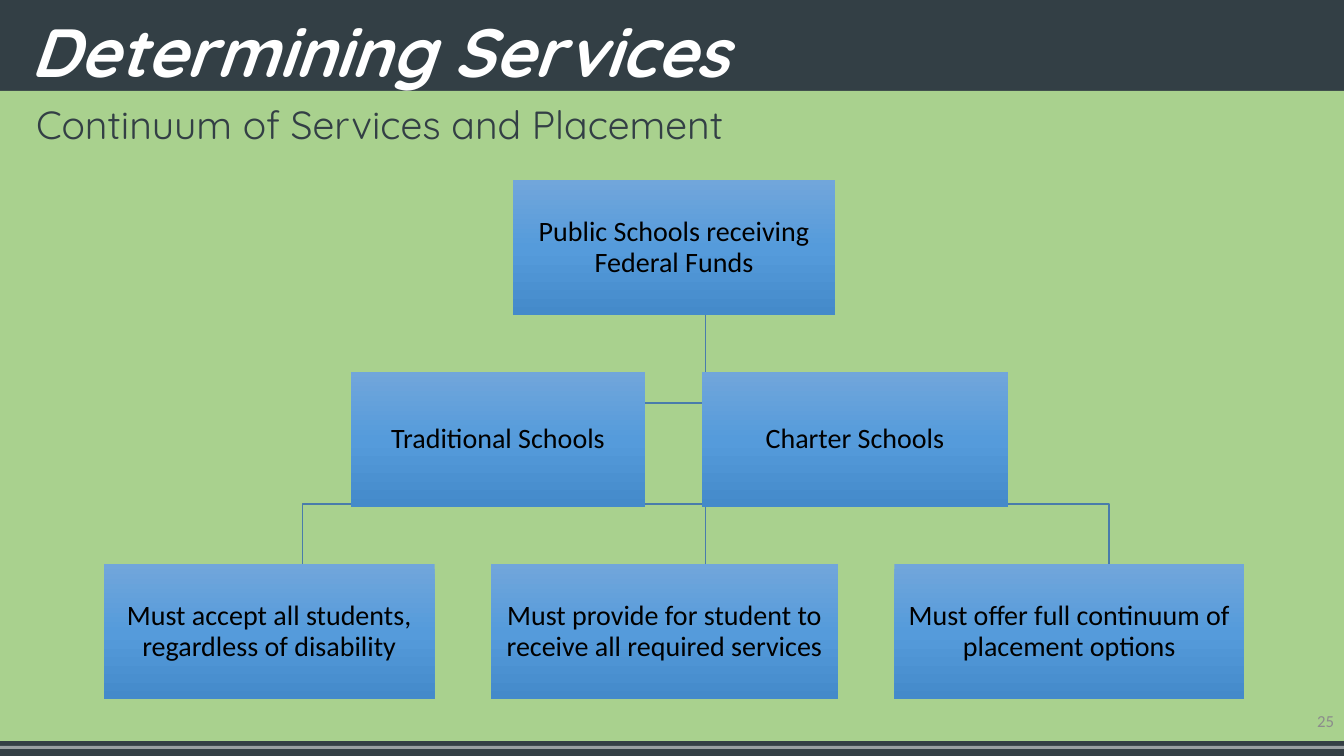
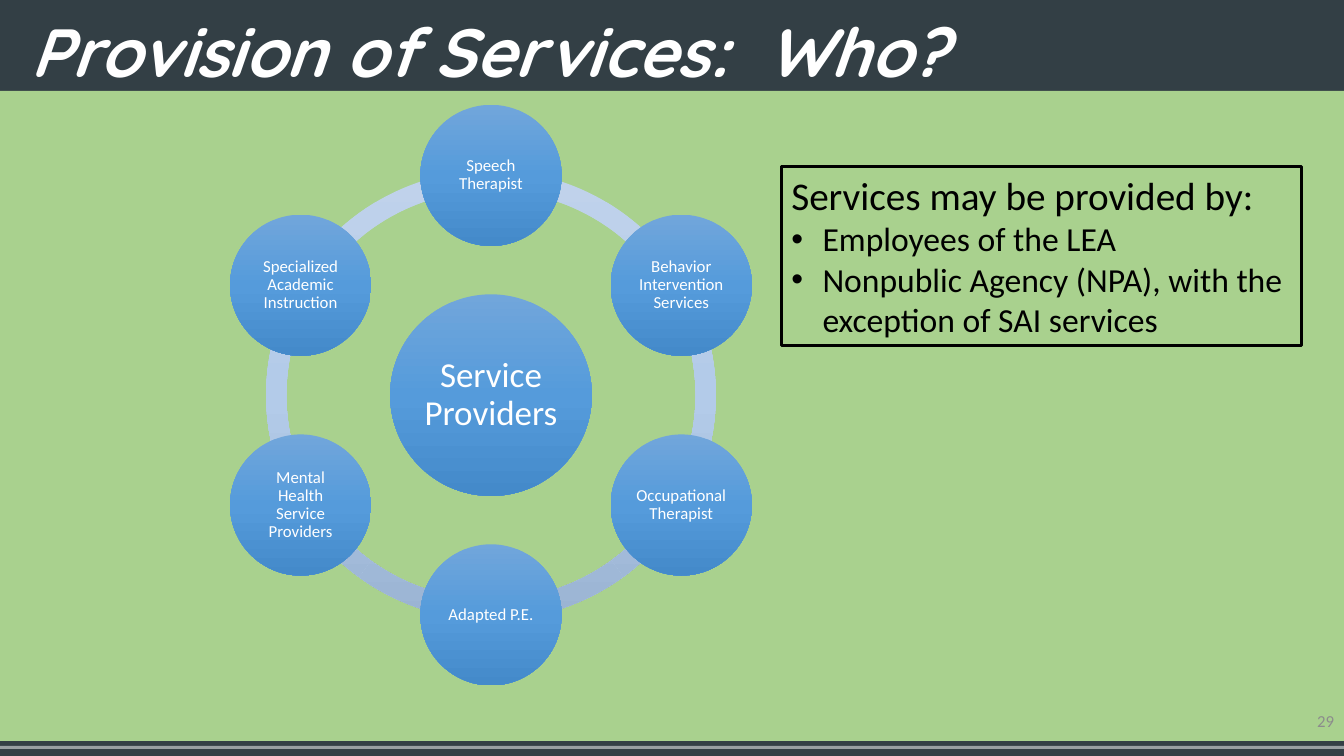
from math import cos, radians, sin

from lxml.etree import SubElement
from pptx import Presentation
from pptx.dml.color import RGBColor
from pptx.enum.shapes import MSO_SHAPE as Form
from pptx.enum.text import MSO_ANCHOR as Anchor, MSO_AUTO_SIZE as Fit, PP_ALIGN as Align
from pptx.oxml.ns import qn
from pptx.util import Inches, Pt

WIDTH, HEIGHT = 13.33, 7.5
COLORS = {"slate": "333F45", "base": "343F45", "green": "A9D18E", "white": "FFFFFF",
          "black": "000000", "gray": "8C8C8C", "link": "497CAB"}
BLUE = ("71A6DB", "559BDB", "448ACA")
PALE = ("C0D2EB", "B3CBE9", "9BB4D3")

STYLES = {
    "title": dict(name="Quicksand", size=48.6, bold=True, italic=True, color="white"),
    "subtitle": dict(name="Quicksand", size=28, color="slate"),
    "number": dict(name="Calibri", size=12, color="gray"),
    "school": dict(name="Calibri", size=20, color="black"),
    "hub": dict(name="Calibri", size=25, color="white"),
    "provider": dict(name="Calibri", size=12, color="white"),
    "lead": dict(name="Calibri", size=28, color="black"),
    "item": dict(name="Calibri", size=24, color="black"),
}

SUBTITLE = "Continuum of Services and Placement"
BOX_HEIGHT, GAP = 1.34, 0.56
TREE = [
    (5.09, 1.79, [("Public Schools receiving Federal Funds", 3.19)]),
    (3.48, 3.69, [("Traditional Schools", 2.92), ("Charter Schools", 3.04)]),
    (1.03, 5.6, [("Must accept all students, regardless of disability", 3.28),
                 ("Must provide for student to receive all required services", 3.44),
                 ("Must offer full continuum of placement options", 3.47)]),
]

HUB = "Service Providers"
PROVIDERS = ["Speech Therapist", "Behavior Intervention Services", "Occupational Therapist",
             "Adapted P.E.", "Mental Health Service Providers",
             "Specialized Academic Instruction"]
CENTER_X, CENTER_Y, ORBIT = 4.87, 3.92, 2.18
HUB_SIZE, PROVIDER_SIZE, RING_SIZE, RING_SHARE = 2, 1.4, 4.46, 0.045
ARC_STOPS = [18 + 36 * step for step in range(6)]

LEAD = "Services may be provided by:"
ITEMS = ["Employees of the LEA", "Nonpublic Agency (NPA), with the exception of SAI services"]


def rgb(name):
    return RGBColor.from_string(COLORS[name])


def place(shape, *area):
    for side, value in zip(("left", "top", "width", "height"), area):
        setattr(shape, side, Inches(value))


def write(para, text, style, align=Align.LEFT, spacing=1):
    span = para.add_run()
    span.text = text
    para.alignment, para.line_spacing = align, spacing
    for key, value in STYLES[style].items():
        if key == "color":
            span.font.color.rgb = rgb(value)
        else:
            setattr(span.font, key, Pt(value) if key == "size" else value)


def frame_of(shape, insets, anchor=Anchor.MIDDLE):
    frame = shape.text_frame
    frame.word_wrap, frame.auto_size, frame.vertical_anchor = True, Fit.NONE, anchor
    for side, inset in zip(("left", "top", "right", "bottom"), insets):
        setattr(frame, f"margin_{side}", Inches(inset))
    return frame


def add_text(page, area, text, style, align=Align.LEFT, anchor=Anchor.MIDDLE, spacing=1):
    box = page.shapes.add_textbox(*map(Inches, area))
    frame = frame_of(box, (0.1, 0.05, 0.1, 0.05), anchor)
    write(frame.paragraphs[0], text, style, align, spacing)


def add_form(page, form, area, color=None):
    shape = page.shapes.add_shape(form, *map(Inches, area))
    shape.shadow.inherit = False
    shape.line.fill.background()
    if color:
        shape.fill.solid()
        shape.fill.fore_color.rgb = rgb(color)
    else:
        shape.fill.background()
    return shape


def shade(shape, colors):
    shape.fill.gradient()
    shape.fill.gradient_angle = 270
    stops = shape._element.spPr.find(qn("a:gradFill")).find(qn("a:gsLst"))
    for stop in list(stops):
        stops.remove(stop)
    for index, color in enumerate(colors):
        stop = SubElement(stops, qn("a:gs"), pos=str(index * 50000))
        SubElement(stop, qn("a:srgbClr"), val=color)


def add_node(page, form, area, text, style, inset):
    node = add_form(page, form, area)
    shade(node, BLUE)
    write(frame_of(node, [inset] * 4).paragraphs[0], text, style, Align.CENTER, 0.9)


def add_route(page, start, *points):
    builder = page.shapes.build_freeform(*start, scale=Inches(1))
    builder.add_line_segments(points, close=False)
    route = builder.convert_to_shape()
    route.shadow.inherit = False
    route.fill.background()
    route.line.color.rgb = rgb("link")
    route.line.width = Pt(1)


def add_page(deck, title, number):
    page = deck.slides.add_slide(deck.slide_layouts[5])
    add_form(page, Form.RECTANGLE, (0, 0.9, WIDTH, 6.45), "green")
    stripe = add_form(page, Form.RECTANGLE, (0, 7.4, WIDTH, 0.03), "white")
    tint = stripe._element.spPr.find(qn("a:solidFill")).find(qn("a:srgbClr"))
    SubElement(tint, qn("a:alpha"), val="50000")
    head = page.shapes.title
    page.shapes._spTree.append(head._element)
    place(head, 0, -0.14, WIDTH, 1.04)
    head.fill.solid()
    head.fill.fore_color.rgb = rgb("slate")
    write(frame_of(head, (0.3, 0.4, 0.1, 0.05)).paragraphs[0], title, "title", spacing=0.9)
    add_text(page, (WIDTH - 3, 6.95, 3, 0.4), number, "number", Align.RIGHT)
    return page


def add_tree(page):
    rows = []
    for left, top, entries in TREE:
        row = []
        for text, width in entries:
            row.append((text, (left, top, width, BOX_HEIGHT)))
            left += width + GAP
        rows.append(row)
    (root,), (traditional, charter), leaves = [[area for _, area in row] for row in rows]

    trunk = root[0] + root[2] / 2
    start = (trunk, root[1] + BOX_HEIGHT)
    side = charter[1] + BOX_HEIGHT / 2
    for end in (charter[0], traditional[0] + traditional[2]):
        add_route(page, start, (trunk, side), (end, side))
    for left, top, width, _ in leaves:
        middle, bus = left + width / 2, top - GAP / 2
        add_route(page, start, (trunk, bus), (middle, bus), (middle, top))
    for row in rows:
        for text, area in row:
            add_node(page, Form.RECTANGLE, area, text, "school", 0.01)


def around(x, y, size):
    return x - size / 2, y - size / 2, size, size


def add_wheel(page):
    for start, end in zip(ARC_STOPS, ARC_STOPS[1:] + ARC_STOPS[:1]):
        arc = add_form(page, Form.BLOCK_ARC, around(CENTER_X, CENTER_Y, RING_SIZE))
        for index, value in enumerate((start * 0.6, end * 0.6, RING_SHARE)):
            arc.adjustments[index] = value
        shade(arc, PALE)
    add_node(page, Form.OVAL, around(CENTER_X, CENTER_Y, HUB_SIZE), HUB, "hub", 0.03)
    for index, text in enumerate(PROVIDERS):
        angle = radians(index * 360 / len(PROVIDERS))
        x, y = CENTER_X + ORBIT * sin(angle), CENTER_Y - ORBIT * cos(angle)
        add_node(page, Form.OVAL, around(x, y, PROVIDER_SIZE), text, "provider", 0.02)


def add_callout(page):
    box = add_form(page, Form.RECTANGLE, (7.75, 1.65, 5.16, 1.78))
    box.line.color.rgb = rgb("black")
    box.line.width = Pt(2.25)
    frame = frame_of(box, (0.1, 0.05, 0.1, 0.05), Anchor.TOP)
    write(frame.paragraphs[0], LEAD, "lead")
    for text in ITEMS:
        para = frame.add_paragraph()
        props = para._p.get_or_add_pPr()
        for key, value in (("marL", 0.31), ("indent", -0.31)):
            props.set(key, str(Inches(value)))
        SubElement(props, qn("a:buFont"), typeface="Arial")
        SubElement(props, qn("a:buChar"), char="•")
        write(para, text, "item")


def main():
    deck = Presentation()
    deck.slide_width, deck.slide_height = Inches(WIDTH), Inches(HEIGHT)
    backdrop = deck.slide_master.background.fill
    backdrop.solid()
    backdrop.fore_color.rgb = rgb("base")

    services = add_page(deck, "Determining Services", "25")
    add_tree(services)
    add_text(services, (0.26, 1, 10.91, 0.56), SUBTITLE, "subtitle",
             anchor=Anchor.TOP, spacing=0.9)

    providers = add_page(deck, "Provision of Services:  Who?", "29")
    add_wheel(providers)
    add_callout(providers)
    deck.save("out.pptx")


if __name__ == "__main__":
    main()
